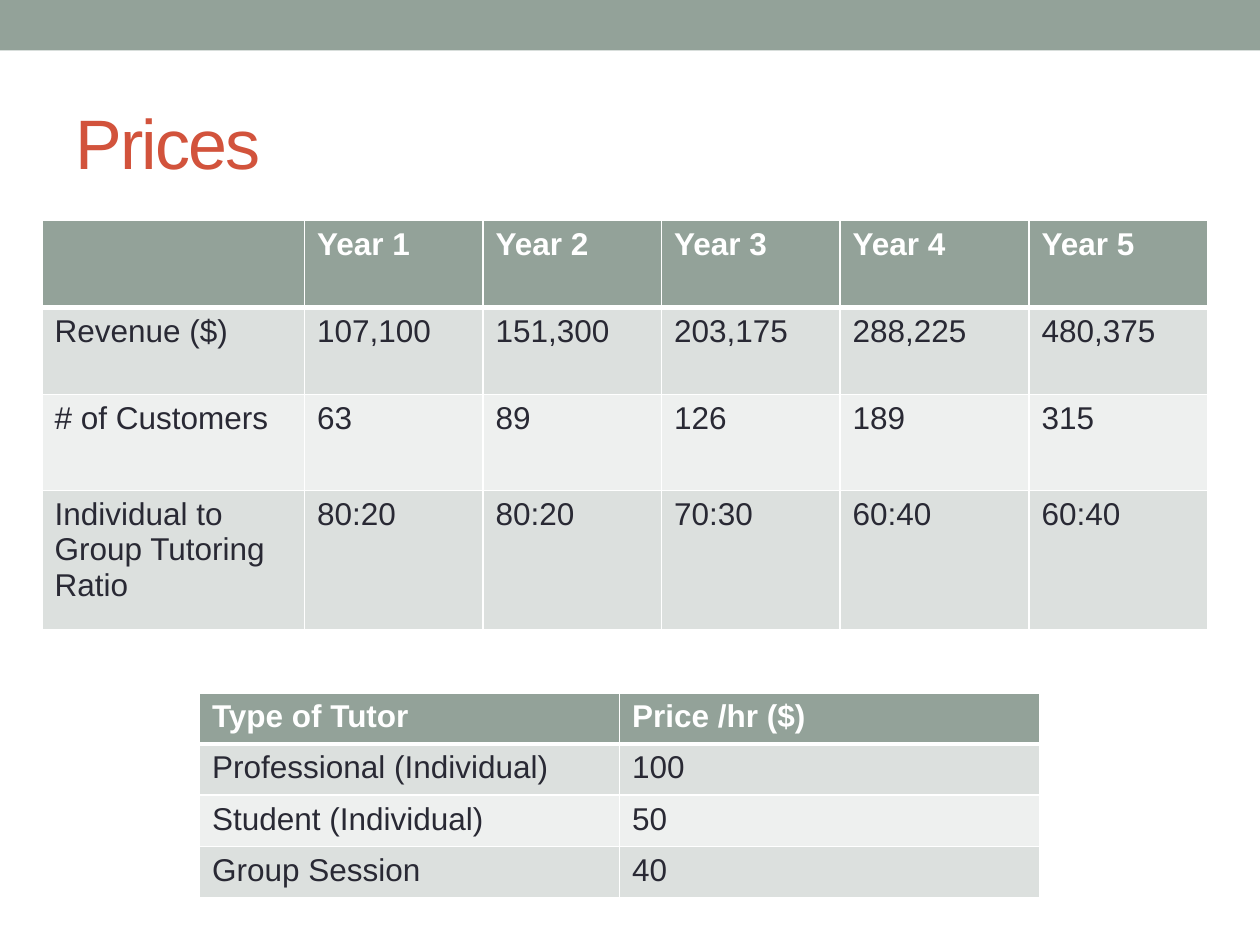
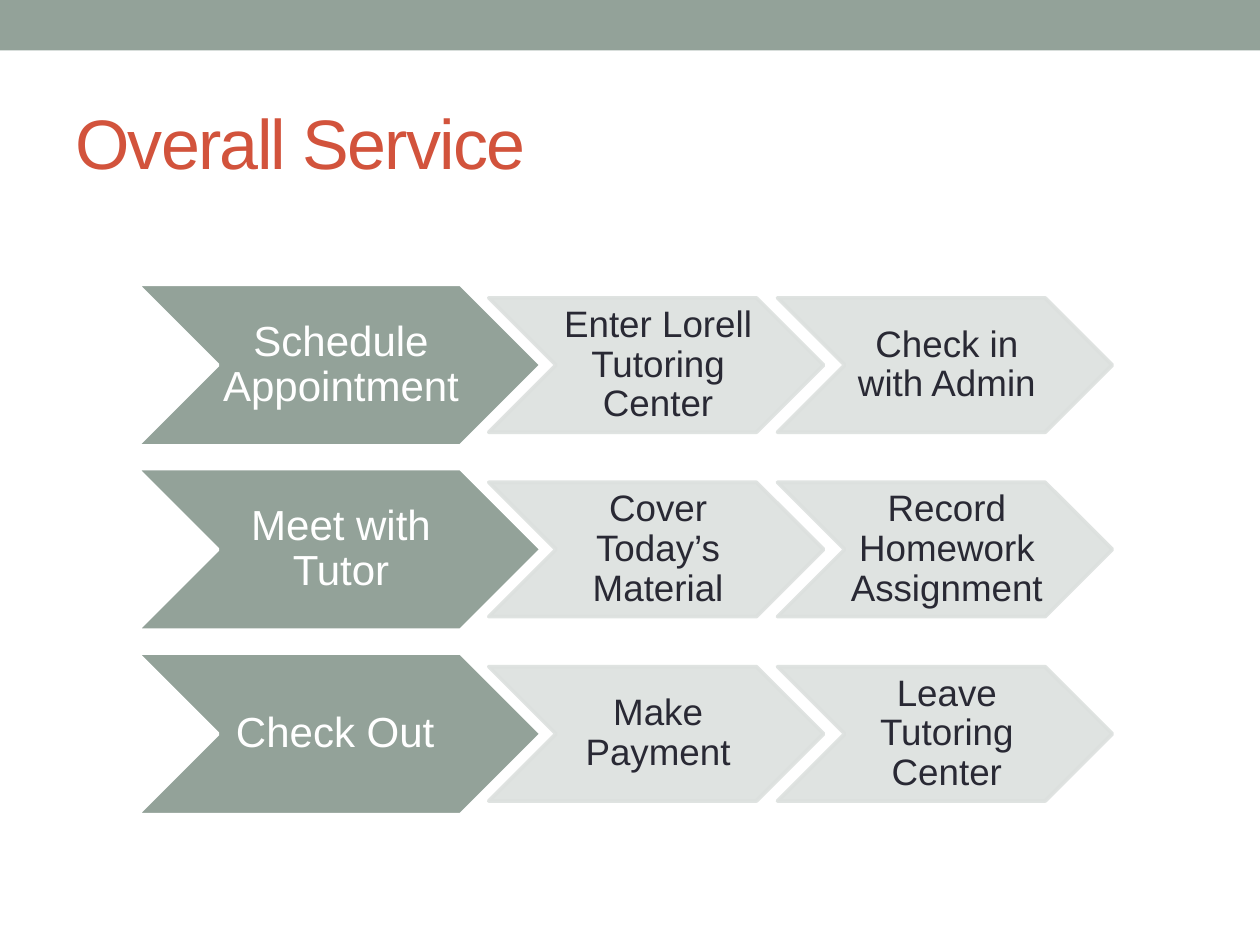
import pptx
import pptx.util
import pptx.dml.color
import pptx.enum.shapes
import pptx.enum.text
import pptx.oxml
import pptx.oxml.ns
import lxml.etree

RGBColor = pptx.dml.color.RGBColor
SHAPE = pptx.enum.shapes.MSO_SHAPE
ALIGN = pptx.enum.text.PP_ALIGN
ANCHOR = pptx.enum.text.MSO_ANCHOR
qn = pptx.oxml.ns.qn

SAGE = RGBColor(0x93, 0xA2, 0x99)
MIST = RGBColor(0xDC, 0xE0, 0xDE)
PALE = RGBColor(0xEE, 0xF0, 0xEF)
WHITE = RGBColor(0xFF, 0xFF, 0xFF)
INK = RGBColor(0x29, 0x29, 0x34)
BRICK = RGBColor(0xD2, 0x53, 0x3C)
FONT = "Arial"

COLS, ROWS = 120, 90
LINE_WIDTH = 2.08

YEARS = [
    ["", "Year 1", "Year 2", "Year 3", "Year 4", "Year 5"],
    ["Revenue ($)", "107,100", "151,300", "203,175", "288,225", "480,375"],
    ["# of Customers", "63", "89", "126", "189", "315"],
    ["Individual to Group Tutoring Ratio", "80:20", "80:20", "70:30", "60:40", "60:40"],
]
RATES = [
    ["Type of Tutor", "Price /hr ($)"],
    ["Professional (Individual)", "100"],
    ["Student (Individual)", "50"],
    ["Group Session", "40"],
]
STAGES = [
    ["Schedule Appointment", "Enter Lorell Tutoring Center", "Check in with Admin"],
    ["Meet with Tutor", "Cover Today’s Material", "Record Homework Assignment"],
    ["Check Out ", "Make Payment", "Leave Tutoring Center"],
]


def write(tf, text, size=18, color=INK, bold=False, align=ALIGN.LEFT,
          spacing=None, tracking=None):
    p = tf.paragraphs[0]
    p.alignment = align
    p.line_spacing = spacing
    r = p.add_run()
    r.text = text
    r.font.name = FONT
    r.font.size = pptx.util.Pt(size)
    r.font.bold = bold
    r.font.color.rgb = color
    if tracking is not None:
        r.font._element.set("spc", str(tracking * 100))


def set_border(cell, side, width):
    ln = lxml.etree.SubElement(cell._tc.get_or_add_tcPr(), qn("a:" + side),
                               w=str(pptx.util.Pt(width)))
    fill = lxml.etree.SubElement(ln, qn("a:solidFill"))
    lxml.etree.SubElement(fill, qn("a:srgbClr"), val=str(WHITE))


class Deck:
    def __init__(self):
        self.prs = pptx.Presentation()
        self.prs.slide_width = pptx.util.Inches(10)
        self.prs.slide_height = pptx.util.Inches(7.5)
        self.s = None

    def x(self, cols):
        return round(self.prs.slide_width * cols / COLS)

    def y(self, rows):
        return round(self.prs.slide_height * rows / ROWS)

    def box(self, left, top, width, height):
        return self.x(left), self.y(top), self.x(width), self.y(height)

    def slide(self, title):
        self.s = self.prs.slides.add_slide(self.prs.slide_layouts[6])
        self.shape(SHAPE.RECTANGLE, 0, 0, COLS, 4.8, SAGE)
        tf = self.s.shapes.add_textbox(*self.box(6, 7, 108, 13)).text_frame
        tf.word_wrap = True
        tf.vertical_anchor = ANCHOR.MIDDLE
        write(tf, title, size=40, color=BRICK, tracking=-1)

    def shape(self, kind, left, top, width, height, fill, line=None, opacity=None):
        sp = self.s.shapes.add_shape(kind, *self.box(left, top, width, height))
        sp.shadow.inherit = False
        sp.fill.solid()
        sp.fill.fore_color.rgb = fill
        if line is None:
            sp.line.fill.background()
        else:
            sp.line.color.rgb = line
            sp.line.width = pptx.util.Pt(LINE_WIDTH)
        if opacity is not None:
            for clr in sp._element.spPr.iter(qn("a:srgbClr")):
                lxml.etree.SubElement(clr, qn("a:alpha"), val=str(opacity * 1000))
        return sp

    def chevron(self, text, left, middle, width, height, fill, line, color, size,
                opacity=None):
        sp = self.shape(SHAPE.CHEVRON, left, middle - height / 2, width, height,
                        fill, line, opacity)
        tf = sp.text_frame
        tf.word_wrap = True
        tf.vertical_anchor = ANCHOR.MIDDLE
        tf.margin_left = pptx.util.Inches(0.03)
        tf.margin_right = 0
        tf.margin_top = tf.margin_bottom = pptx.util.Inches(0.02)
        write(tf, text, size=size, color=color, align=ALIGN.CENTER, spacing=0.9)

    def table(self, data, left, top, widths, heights):
        frame = self.s.shapes.add_table(
            len(data), len(widths), *self.box(left, top, sum(widths), sum(heights)))
        tbl = frame.table
        for col, width in zip(tbl.columns, widths):
            col.width = self.x(width)
        for i, (row, height) in enumerate(zip(data, heights)):
            tbl.rows[i].height = self.y(height)
            for j, text in enumerate(row):
                self.cell(tbl.cell(i, j), text, i)

    def cell(self, cell, text, row):
        header = row == 0
        edges = {"lnL": 1, "lnR": 1, "lnT": 3 if row == 1 else 1, "lnB": 3 if header else 1}
        for side, width in edges.items():
            set_border(cell, side, width)
        cell.fill.solid()
        cell.fill.fore_color.rgb = SAGE if header else (PALE, MIST)[row % 2]
        if text:
            write(cell.text_frame, text, color=WHITE if header else INK, bold=header)


def main():
    deck = Deck()

    deck.slide("Prices")
    deck.table(YEARS, 4, 21, [25, 17, 17, 17, 18, 17], [8.3, 8.3, 9.15, 13.2])
    deck.table(RATES, 19, 66, [40, 40], [4.87] * 4)

    deck.slide("Overall Service")
    for i, (stage, *steps) in enumerate(STAGES):
        middle = 34.77 + 17.56 * i
        deck.chevron(stage, 13.05, middle, 38.5, 15.4, SAGE, WHITE, WHITE, 24)
        for j, step in enumerate(steps):
            deck.chevron(step, 46.55 + 27.5 * j, middle, 31.9, 12.8,
                         MIST, MIST, INK, 21, opacity=90)

    deck.prs.save("out.pptx")


if __name__ == "__main__":
    main()
